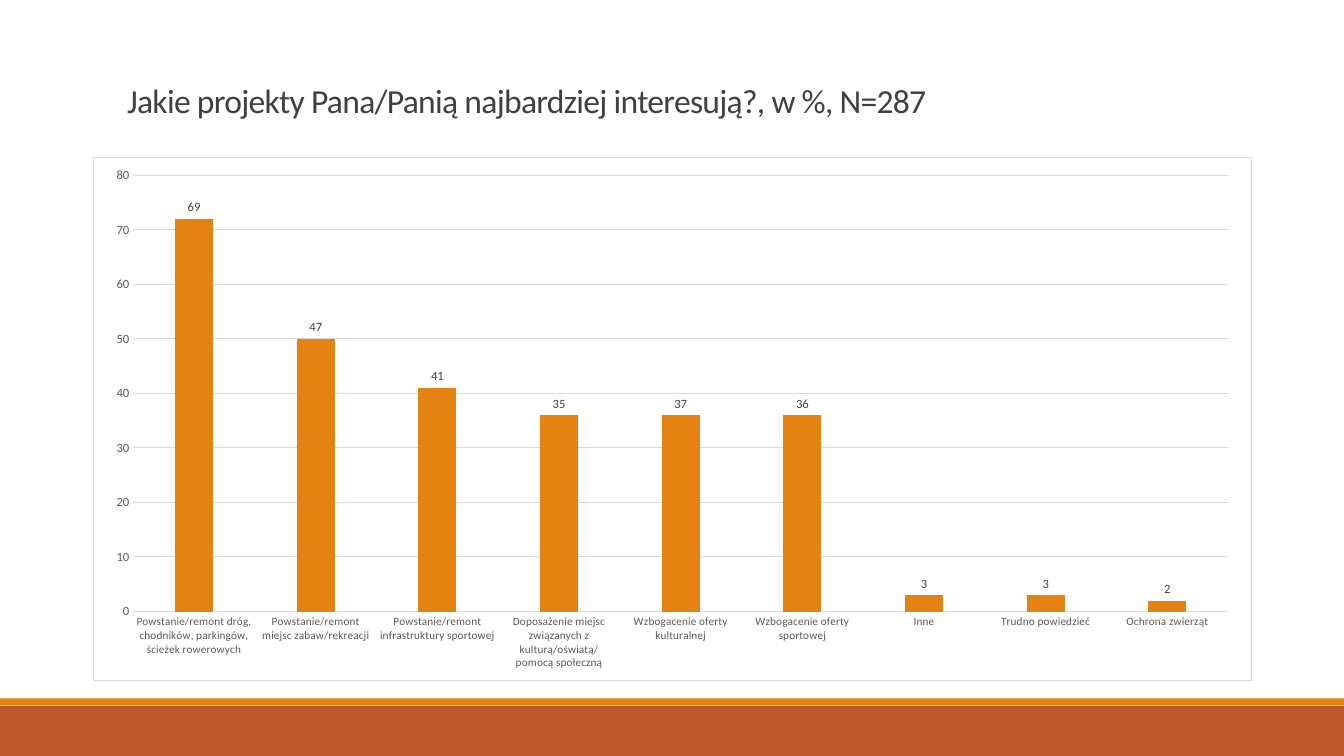
from lxml import etree
from pptx import Presentation
from pptx import util as u
from pptx.chart import data as chart_data
from pptx.dml.color import RGBColor
from pptx.enum import chart as ch, shapes, text
from pptx.oxml import ns

FONT = "Calibri"
COLOURS = {
    "band": "BD582C",
    "accent": "E48312",
    "dark": "404040",
    "axis": "595959",
    "grid": "D9D9D9",
    "paper": "FFFFFF",
}
PROJECTS = [
    ("Powstanie/remont dróg, chodników, parkingów, ścieżek rowerowych", 72),
    ("Powstanie/remont miejsc zabaw/rekreacji", 50),
    ("Powstanie/remont infrastruktury sportowej", 41),
    ("Doposażenie miejsc związanych z kulturą/oświatą/pomocą społeczną", 36),
    ("Wzbogacenie oferty kulturalnej", 36),
    ("Wzbogacenie oferty sportowej", 36),
    ("Inne", 3),
    ("Trudno powiedzieć", 3),
    ("Ochrona zwierząt", 2),
]
# Labels whose wording differs from the bar's value, by bar index
CUSTOM_LABELS = {0: "69", 1: "47", 3: "35", 4: "37"}


def colour(name):
    return RGBColor.from_string(COLOURS[name])


def style_font(font, size, name):
    font.name = FONT
    font.size = u.Pt(size)
    font.bold = False
    font.color.rgb = colour(name)


def style_line(line, name):
    line.color.rgb = colour(name)
    line.width = u.Pt(0.75)


def add_footer(page, left, top, width, height):
    """Place a thin accent stripe above a broad band."""
    stripe = u.Cm(0.17)
    gap = u.Cm(0.01)
    band_top = top + stripe + gap
    for y, tall, name in (
        (band_top, height - stripe - gap, "band"),
        (top, stripe, "accent"),
    ):
        bar = page.shapes.add_shape(shapes.MSO_SHAPE.RECTANGLE, left, y, width, tall)
        bar.shadow.inherit = False
        bar.fill.solid()
        bar.fill.fore_color.rgb = colour(name)
        bar.line.fill.background()


def add_title(page, left, top, width, height):
    title = page.shapes.title
    title.left, title.top, title.width, title.height = left, top, width, height
    frame = title.text_frame
    frame.text = "Jakie projekty Pana/Panią najbardziej interesują?, w %, N=287"
    frame.word_wrap = True
    frame.vertical_anchor = text.MSO_ANCHOR.BOTTOM
    para = frame.paragraphs[0]
    para.alignment = text.PP_ALIGN.LEFT
    para.line_spacing = 0.85
    span = para.runs[0]
    style_font(span.font, 24, "dark")
    span.font._element.set("spc", "-50")


def frame_chart(chart):
    """Give the chart area a plain fill and a thin border."""
    area = etree.fromstring(
        f'<c:spPr {ns.nsdecls("c", "a")}>'
        f'<a:solidFill><a:srgbClr val="{COLOURS["paper"]}"/></a:solidFill>'
        f'<a:ln w="{u.Pt(0.75)}"><a:solidFill><a:srgbClr val="{COLOURS["grid"]}"/>'
        "</a:solidFill></a:ln></c:spPr>"
    )
    chart._chartSpace.find(ns.qn("c:chart")).addnext(area)


def style_axes(chart):
    for axis, size in ((chart.category_axis, 8), (chart.value_axis, 9)):
        axis.major_tick_mark = ch.XL_TICK_MARK.NONE
        axis.minor_tick_mark = ch.XL_TICK_MARK.NONE
        style_font(axis.tick_labels.font, size, "axis")
    style_line(chart.category_axis.format.line, "grid")
    values = chart.value_axis
    values.minimum_scale, values.maximum_scale, values.major_unit = 0, 80, 10
    values.format.line.fill.background()
    values.tick_labels.number_format = "0"
    values.tick_labels.number_format_is_linked = False
    values.has_major_gridlines = True
    style_line(values.major_gridlines.format.line, "grid")


def style_bars(plot):
    plot.gap_width = 219
    plot.overlap = -27
    plot.vary_by_categories = False
    series = plot.series[0]
    series.format.fill.solid()
    series.format.fill.fore_color.rgb = colour("accent")

    labels = series.data_labels
    labels.show_value = True
    labels.number_format = "0"
    labels.number_format_is_linked = False
    labels.position = ch.XL_LABEL_POSITION.OUTSIDE_END
    style_font(labels.font, 9, "dark")
    for index, wording in CUSTOM_LABELS.items():
        label = series.points[index].data_label
        label.text_frame.text = wording
        style_font(label.text_frame.paragraphs[0].runs[0].font, 9, "dark")
        label.position = ch.XL_LABEL_POSITION.OUTSIDE_END


def add_project_chart(page, left, top, width, height):
    data = chart_data.CategoryChartData(number_format="0")
    data.categories = [project for project, _ in PROJECTS]
    data.add_series("Series 1", [share for _, share in PROJECTS])
    chart = page.shapes.add_chart(
        ch.XL_CHART_TYPE.COLUMN_CLUSTERED, left, top, width, height, data
    ).chart
    chart.has_title = False
    chart.has_legend = False
    chart.font.name = FONT
    chart.font.size = u.Pt(10)
    frame_chart(chart)
    style_axes(chart)
    style_bars(chart.plots[0])


def main():
    deck = Presentation()
    deck.slide_width, deck.slide_height = u.Cm(33.87), u.Cm(19.05)
    page = deck.slides.add_slide(deck.slide_layouts.get_by_name("Title Only"))
    add_footer(page, 0, u.Cm(17.6), deck.slide_width, u.Cm(1.45))
    add_title(page, u.Cm(2.95), u.Cm(0.64), u.Cm(28.58), u.Cm(2.51))
    add_project_chart(page, u.Cm(2.34), u.Cm(3.96), u.Cm(29.21), u.Cm(13.2))
    deck.save("out.pptx")


if __name__ == "__main__":
    main()
